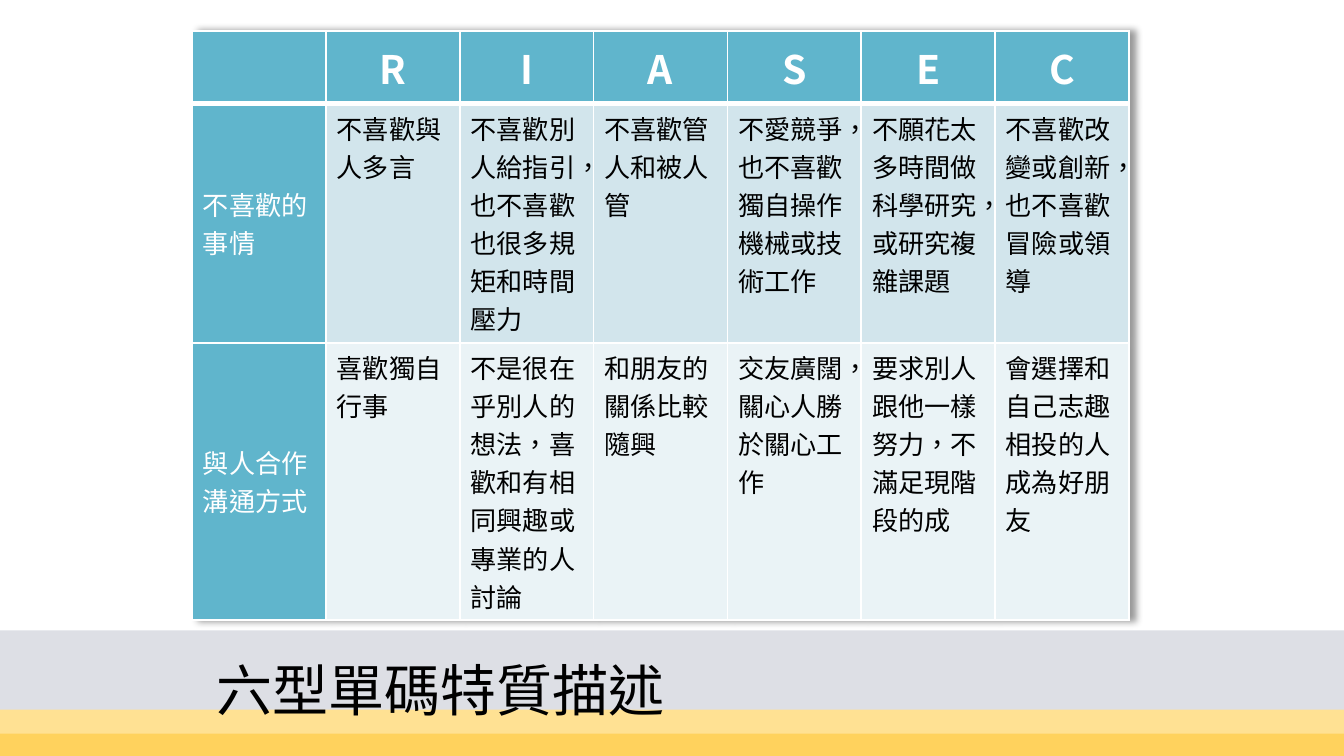
import pptx
import pptx.util
import pptx.dml.color
import pptx.enum.lang
import pptx.enum.shapes
import pptx.enum.text
import pptx.oxml
import pptx.oxml.ns
from lxml import etree

Inches, Pt = pptx.util.Inches, pptx.util.Pt
ALIGN, ANCHOR = pptx.enum.text.PP_ALIGN, pptx.enum.text.MSO_ANCHOR
qn = pptx.oxml.ns.qn

TITLE = "六型單碼特質描述"
ROWS = [
    ["", "R", "I", "A", "S", "E", "C"],
    ["不喜歡的事情", "不喜歡與人多言", "不喜歡別人給指引，也不喜歡也很多規矩和時間壓力",
     "不喜歡管人和被人管", "不愛競爭，也不喜歡獨自操作機械或技術工作",
     "不願花太多時間做科學研究，或研究複雜課題", "不喜歡改變或創新，也不喜歡冒險或領導"],
    ["與人合作溝通方式", "喜歡獨自行事", "不是很在乎別人的想法，喜歡和有相同興趣或專業的人討論",
     "和朋友的關係比較隨興", "交友廣闊，關心人勝於關心工作",
     "要求別人跟他一樣努力，不滿足現階段的成", "會選擇和自己志趣相投的人成為好朋友"],
]
SLIDE_WIDTH = 10
ROW_HEIGHTS = [0.54, 1.71, 1.98]
TABLE_WIDTH = 6.97
HEADER_FILL = "60B5CC"
BODY_FILLS = {1: "D2E5EC", 2: "EAF3F6"}
BANDS = [(4.69, 0.76, "DDDFE5"), (5.45, 0.18, "FFD25D"), (5.28, 0.18, "FFE193")]
SHADOW = ('<a:effectLst xmlns:a="http://schemas.openxmlformats.org/drawingml/2006/main">'
          '<a:outerShdw blurRad="50800" dist="38100" dir="0" algn="l" rotWithShape="0">'
          '<a:srgbClr val="000000"><a:alpha val="40000"/></a:srgbClr>'
          '</a:outerShdw></a:effectLst>')


def rgb(value):
    return pptx.dml.color.RGBColor.from_string(value)


def add_text(p, text, size, color, font, bold=False):
    r = p.add_run()
    r.text = text
    r.font.size, r.font.bold, r.font.name = Pt(size), bold, font
    r.font.language_id = pptx.enum.lang.MSO_LANGUAGE_ID.TRADITIONAL_CHINESE
    r.font.color.rgb = rgb(color)
    etree.SubElement(r.font._element, qn("a:ea"), typeface=font)


def set_borders(cell, bottom):
    """Put white lines around a cell, 1 pt except for the bottom one."""
    tcPr = cell._tc.get_or_add_tcPr()
    widths = {"lnL": 1, "lnR": 1, "lnT": 1, "lnB": bottom}
    for i, (side, width) in enumerate(widths.items()):
        ln = etree.Element(qn("a:" + side), w=str(Pt(width)))
        fill = etree.SubElement(ln, qn("a:solidFill"))
        etree.SubElement(fill, qn("a:srgbClr"), val="FFFFFF")
        tcPr.insert(i, ln)


def add_bands(s):
    for top, height, color in BANDS:
        sp = s.shapes.add_shape(pptx.enum.shapes.MSO_SHAPE.RECTANGLE,
                                0, Inches(top), Inches(SLIDE_WIDTH), Inches(height))
        sp.shadow.inherit = False
        sp.fill.solid()
        sp.fill.fore_color.rgb = rgb(color)
        sp.line.fill.background()


def add_title(s):
    sp = s.shapes.title
    sp.left, sp.top, sp.width, sp.height = map(Inches, (1.54, 4.69, 5.16, 0.94))
    s.shapes._spTree.append(sp._element)  # in front of the bands
    tf = sp.text_frame
    tf.word_wrap = True
    tf.vertical_anchor = ANCHOR.MIDDLE
    tf.margin_left = tf.margin_right = Inches(0.07)
    tf.margin_top = tf.margin_bottom = Inches(0.04)
    p = tf.paragraphs[0]
    p.alignment, p.line_spacing = ALIGN.LEFT, 0.9
    add_text(p, TITLE, 30, "000000", "Noto Sans CJK JP")


def add_trait_table(s):
    table = s.shapes.add_table(
        len(ROWS), len(ROWS[0]), Inches(1.43), Inches(0.23),
        Inches(TABLE_WIDTH), Inches(sum(ROW_HEIGHTS))).table
    table._tbl.tblPr.insert(0, pptx.oxml.parse_xml(SHADOW))
    for column in table.columns:
        column.width = Inches(TABLE_WIDTH / len(ROWS[0]))
    for i, (texts, height) in enumerate(zip(ROWS, ROW_HEIGHTS)):
        table.rows[i].height = Inches(height)
        for j, text in enumerate(texts):
            cell = table.cell(i, j)
            header = i == 0 or j == 0
            cell.fill.solid()
            cell.fill.fore_color.rgb = rgb(HEADER_FILL if header else BODY_FILLS[i])
            set_borders(cell, 3 if i == 0 else 1)
            cell.margin_left = cell.margin_right = Inches(0.08)
            cell.margin_top = cell.margin_bottom = Inches(0.04)
            cell.vertical_anchor = ANCHOR.MIDDLE if header else ANCHOR.TOP
            p = cell.text_frame.paragraphs[0]
            p.alignment = ALIGN.CENTER if i == 0 else ALIGN.LEFT
            if text:
                add_text(p, text, 21 if i == 0 else 14,
                         "FFFFFF" if header else "000000",
                         "Noto Sans CJK SC", bold=i == 0)


def main():
    prs = pptx.Presentation()
    prs.slide_width = Inches(SLIDE_WIDTH)
    prs.slide_height = Inches(SLIDE_WIDTH * 9 / 16)
    s = prs.slides.add_slide(prs.slide_layouts[5])
    add_bands(s)
    add_title(s)
    add_trait_table(s)
    prs.save("out.pptx")


if __name__ == "__main__":
    main()
